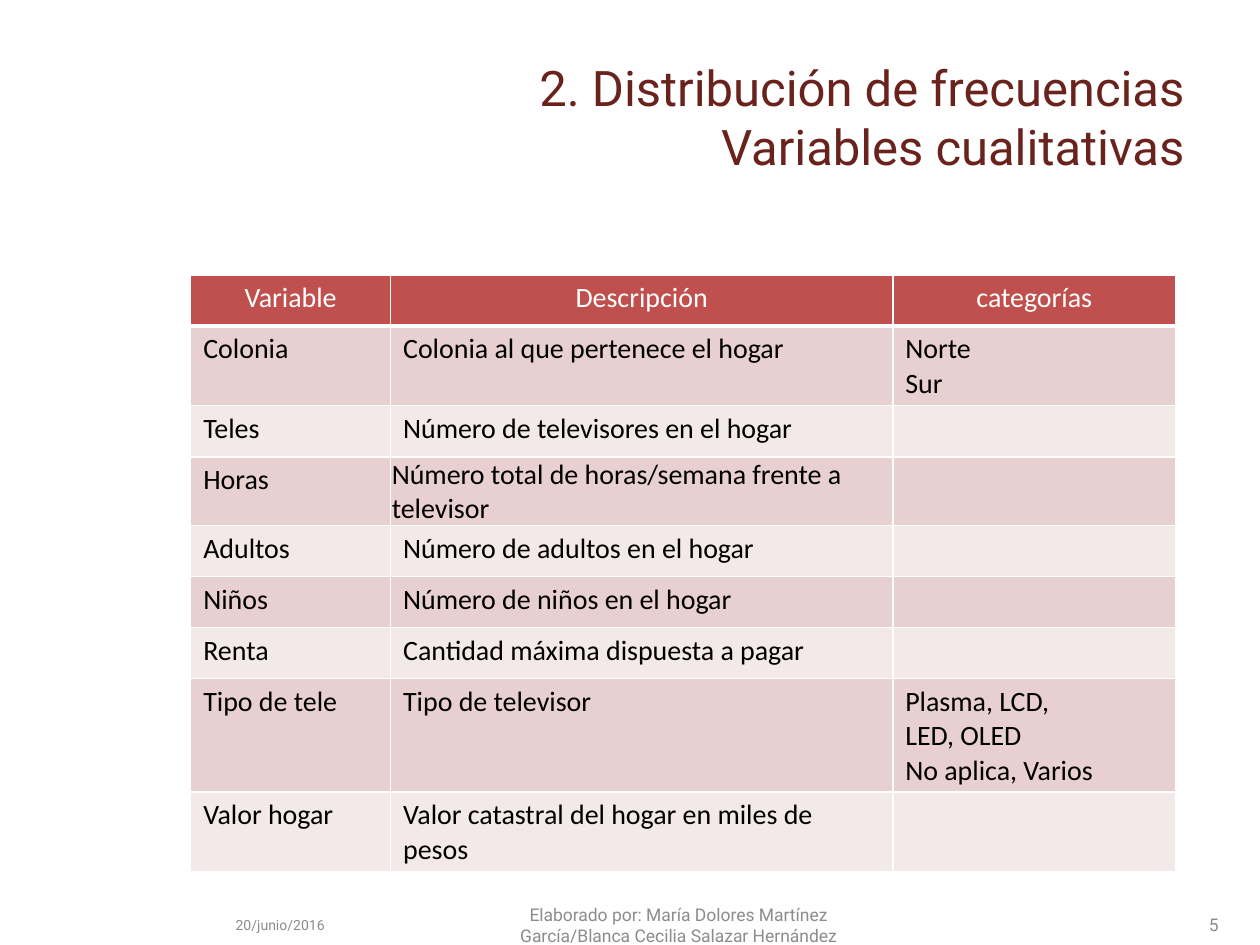
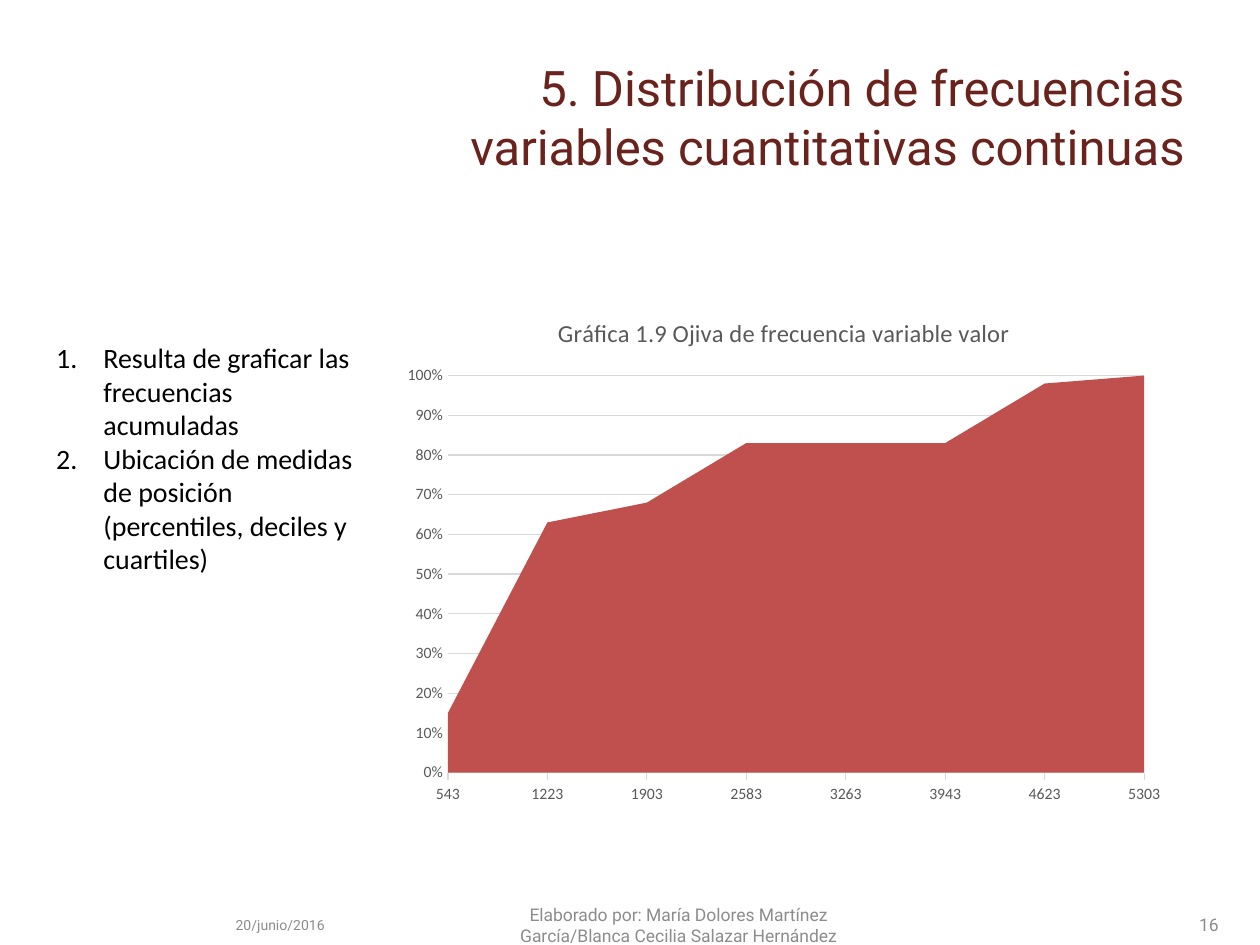
from dataclasses import dataclass

from lxml.etree import SubElement
from pptx import Presentation
from pptx.chart.data import CategoryChartData
from pptx.dml.color import RGBColor
from pptx.enum.chart import XL_CHART_TYPE, XL_TICK_MARK
from pptx.enum.shapes import MSO_SHAPE
from pptx.enum.text import MSO_ANCHOR, MSO_AUTO_SIZE, PP_ALIGN
from pptx.oxml.ns import qn
from pptx.util import Pt


@dataclass(frozen=True)
class Theme:
    """Colours, fonts and type sizes shared by the slides."""
    white: str = "FFFFFF"
    black: str = "000000"
    title: str = "6A221D"
    accent: str = "C0504D"
    band_dark: str = "E8D0D0"
    band_light: str = "F4E9E9"
    footer: str = "8C8C8C"
    chart_text: str = "595959"
    chart_line: str = "D9D9D9"
    heading_font: str = "Roboto"
    body_font: str = "Calibri"
    title_size: float = 28
    body_size: float = 16
    chart_title_size: float = 14
    footer_size: float = 10
    axis_size: float = 9
    date_size: float = 8


THEME = Theme()
DATE = "20/junio/2016"
AUTHORS = "Elaborado por: María Dolores Martínez García/Blanca Cecilia Salazar Hernández"
COLUMN_WIDTHS = (114.2, 287, 161.8)
ROW_HEIGHT = 29.2
HEADER = ("Variable", "Descripción", "categorías")
VARIABLES = (
    ("Colonia", "Colonia al que pertenece el hogar", ("Norte", "Sur")),
    ("Teles", "Número de televisores en el hogar", ()),
    ("Horas", "Número total de horas/semana frente a televisor", ()),
    ("Adultos", "Número de adultos en el hogar", ()),
    ("Niños", "Número de niños en el hogar", ()),
    ("Renta", "Cantidad máxima dispuesta a pagar", ()),
    ("Tipo de tele", "Tipo de televisor", ("Plasma, LCD,", "LED, OLED", "No aplica, Varios")),
    ("Valor hogar", "Valor catastral del hogar en miles de pesos", ()),
)
CLASS_LIMITS = [str(limit) for limit in range(543, 5304, 680)]
CUMULATIVE_SHARES = (0.15, 0.63, 0.68, 0.83, 0.83, 0.83, 0.98, 1)
USES = (
    "Resulta de graficar las frecuencias acumuladas",
    "Ubicación de medidas de posición (percentiles, deciles y cuartiles)",
)


def rgb(colour):
    """Turn a hexadecimal string into a colour."""
    return RGBColor.from_string(colour)


def format_font(font, *, size, colour, name):
    """Set the look of a font."""
    font.size, font.name, font.bold = Pt(size), name, False
    font.color.rgb = rgb(colour)


def add_numbering(paragraph, indent):
    """Number a paragraph with a hanging indent."""
    properties = paragraph._p.get_or_add_pPr()
    properties.set("marL", str(Pt(indent)))
    properties.set("indent", str(Pt(-indent)))
    SubElement(properties, qn("a:buFont"), typeface="+mj-lt")
    SubElement(properties, qn("a:buAutoNum"), type="arabicPeriod")


def write_text(text_frame, text, *, size=THEME.body_size, colour=THEME.black,
               name=THEME.body_font, align=PP_ALIGN.LEFT, anchor=MSO_ANCHOR.TOP,
               number_indent=0):
    """Write one paragraph, or one for each item of a tuple."""
    text_frame.word_wrap = True
    text_frame.vertical_anchor = anchor
    lines = (text,) if isinstance(text, str) else text
    for index, line in enumerate(lines):
        paragraph = text_frame.add_paragraph() if index else text_frame.paragraphs[0]
        paragraph.text = line
        paragraph.alignment = align
        if number_indent:
            add_numbering(paragraph, number_indent)
        for run in paragraph.runs:
            format_font(run.font, size=size, colour=colour, name=name)


def place(shape, left, top, width, height):
    """Move and size a shape in points."""
    shape.left, shape.top = Pt(left), Pt(top)
    shape.width, shape.height = Pt(width), Pt(height)


def add_footer(slide, text, left, width, *, size=THEME.footer_size, align=PP_ALIGN.CENTER):
    """Add one piece of the footer line."""
    box = slide.shapes.add_textbox(Pt(left), Pt(514), Pt(width), Pt(28.8))
    write_text(box.text_frame, text, size=size, colour=THEME.footer,
               name=THEME.heading_font, align=align, anchor=MSO_ANCHOR.MIDDLE)


def add_titled_slide(presentation, title, number):
    """Add a slide with its title and footer."""
    slide = presentation.slides.add_slide(presentation.slide_layouts[5])
    shape = slide.shapes.title
    place(shape, 133.2, 21.6, 550.8, 90)
    shape.text_frame.auto_size = MSO_AUTO_SIZE.NONE
    write_text(shape.text_frame, title, size=THEME.title_size, colour=THEME.title,
               name=THEME.heading_font, align=PP_ALIGN.RIGHT, anchor=MSO_ANCHOR.MIDDLE)
    add_footer(slide, DATE, 76.3, 167.8, size=THEME.date_size)
    add_footer(slide, AUTHORS, 273.6, 228.2)
    add_footer(slide, str(number), 535.7, 167.8, align=PP_ALIGN.RIGHT)
    return slide


def add_borders(cell, colour, **widths):
    """Draw the borders of a cell, with widths keyed by side."""
    properties = cell._tc.get_or_add_tcPr()
    for side in "LRTB":
        line = SubElement(properties, qn(f"a:ln{side}"), w=str(Pt(widths.get(side, 1))))
        SubElement(SubElement(line, qn("a:solidFill")), qn("a:srgbClr"), val=colour)


def fill_cell(cell, text, fill, *, bottom=1, **text_format):
    """Border, fill and write a table cell."""
    add_borders(cell, THEME.white, B=bottom)
    cell.fill.solid()
    cell.fill.fore_color.rgb = rgb(fill)
    write_text(cell.text_frame, text, **text_format)


def add_variables_table(slide, left, top):
    """Add the table of variables."""
    row_count = len(VARIABLES) + 1
    table = slide.shapes.add_table(row_count, len(HEADER), Pt(left), Pt(top),
                                   Pt(sum(COLUMN_WIDTHS)), Pt(ROW_HEIGHT * row_count)).table
    table.horz_banding = False
    for column, width in zip(table.columns, COLUMN_WIDTHS):
        column.width = Pt(width)
    for row in table.rows:
        row.height = Pt(ROW_HEIGHT)
    for column_index, text in enumerate(HEADER):
        fill_cell(table.cell(0, column_index), text, THEME.accent, bottom=3,
                  colour=THEME.white, align=PP_ALIGN.CENTER)
    for row_index, variable in enumerate(VARIABLES, 1):
        band = THEME.band_dark if row_index % 2 else THEME.band_light
        for column_index, text in enumerate(variable):
            fill_cell(table.cell(row_index, column_index), text, band)
    hours = table.cell(3, 1)
    hours.vertical_anchor = MSO_ANCHOR.MIDDLE
    hours.margin_left = hours.margin_top = hours.margin_right = Pt(0.75)
    hours.margin_bottom = Pt(0)


def add_numbered_panel(slide, items, left, top, width, height):
    """Add a plain panel with a numbered list."""
    panel = slide.shapes.add_shape(MSO_SHAPE.RECTANGLE, Pt(left), Pt(top), Pt(width), Pt(height))
    panel.shadow.inherit = False
    panel.fill.solid()
    panel.fill.fore_color.rgb = rgb(THEME.white)
    panel.line.fill.background()
    write_text(panel.text_frame, items, number_indent=27)


def format_line(line):
    """Give a chart line the thin grey style."""
    line.color.rgb = rgb(THEME.chart_line)
    line.width = Pt(0.75)


def add_ogive(slide, title, left, top, width, height):
    """Add the area chart of cumulative frequencies."""
    data = CategoryChartData(number_format="0%")
    data.categories = CLASS_LIMITS
    data.add_series("Series 1", CUMULATIVE_SHARES)
    chart = slide.shapes.add_chart(XL_CHART_TYPE.AREA, Pt(left), Pt(top),
                                   Pt(width), Pt(height), data).chart
    chart.has_legend = False
    chart.has_title = True
    write_text(chart.chart_title.text_frame, title, size=THEME.chart_title_size,
               colour=THEME.chart_text, align=PP_ALIGN.CENTER)
    chart.chart_title.include_in_layout = False
    plot = chart.plots[0]
    plot.vary_by_categories = False
    area = plot.series[0].format
    area.fill.solid()
    area.fill.fore_color.rgb = rgb(THEME.accent)
    area.line.fill.background()
    limits, shares = chart.category_axis, chart.value_axis
    for axis, mark in ((limits, XL_TICK_MARK.OUTSIDE), (shares, XL_TICK_MARK.NONE)):
        format_font(axis.tick_labels.font, size=THEME.axis_size,
                    colour=THEME.chart_text, name=THEME.body_font)
        axis.major_tick_mark = mark
        axis.minor_tick_mark = XL_TICK_MARK.NONE
    limits.has_major_gridlines = False
    format_line(limits.format.line)
    shares.minimum_scale, shares.maximum_scale, shares.major_unit = 0, 1, 0.1
    shares.tick_labels.number_format = "0%"
    shares.tick_labels.number_format_is_linked = False
    shares.format.line.fill.background()
    shares.has_major_gridlines = True
    format_line(shares.major_gridlines.format.line)
    shares._element.find(qn("c:crossBetween")).set("val", "midCat")


def main():
    """Build and save the presentation."""
    presentation = Presentation()
    presentation.slide_width, presentation.slide_height = Pt(720), Pt(540)

    slide = add_titled_slide(
        presentation, "2. Distribución de frecuencias\nVariables cualitativas", 5)
    add_variables_table(slide, 109, 157)

    slide = add_titled_slide(
        presentation, "5. Distribución de frecuencias\nvariables cuantitativas continuas", 16)
    add_ogive(slide, "Gráfica 1.9 Ojiva de frecuencia variable valor", 224, 168, 448, 297)
    add_numbered_panel(slide, USES, 25, 191, 195, 201)

    presentation.save("out.pptx")


if __name__ == "__main__":
    main()
